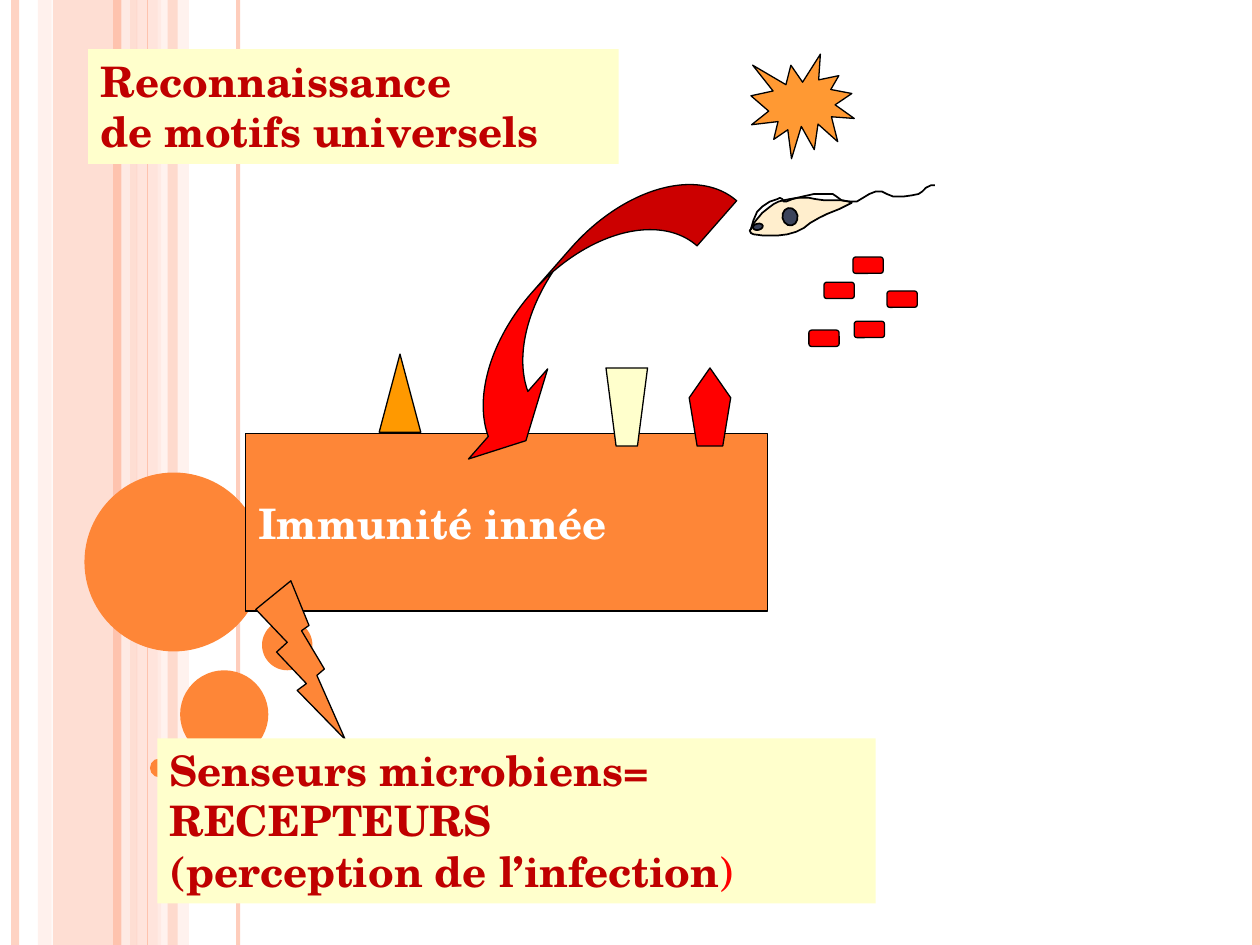
from pptx import Presentation
from pptx.dml.color import RGBColor
from pptx.enum.shapes import MSO_CONNECTOR, MSO_SHAPE as SHAPE
from pptx.enum.text import MSO_ANCHOR as ANCHOR, MSO_AUTO_SIZE as AUTO, PP_ALIGN as ALIGN
from pptx.oxml.ns import qn
from pptx.util import Inches, Pt
from lxml import etree


def rgb(color):
    return RGBColor.from_string(color)


class Builder:
    """Holds the style and the current slide."""
    FONT = {"name": "TeX Gyre Schola", "size": Pt(24), "bold": True}
    ORANGE, RED, CREAM, CRIMSON = "FE8637", "FF0000", "FFFFCC", "C00000"

    def __init__(self, slide):
        self.shapes = slide.shapes

    def paint(self, sp, fill, line, width):
        sp.shadow.inherit = False
        if fill:
            sp.fill.solid()
            sp.fill.fore_color.rgb = rgb(fill)
        else:
            sp.fill.background()
        if line:
            sp.line.color.rgb = rgb(line)
            sp.line.width = Pt(width)
        else:
            sp.line.fill.background()
        return sp

    def opacity(self, sp, percent):
        for clr in sp._element.spPr.iter(qn("a:srgbClr")):
            etree.SubElement(clr, qn("a:alpha"), val=str(percent * 1000))

    def shape(self, kind, box, fill, line="000000", width=0.75, rotation=0, adjust=()):
        sp = self.shapes.add_shape(kind, *map(Inches, box))
        sp.rotation = rotation
        for i, value in enumerate(adjust):
            sp.adjustments[i] = value
        return self.paint(sp, fill, line, width)

    def band(self, left, width, color, percent):
        sp = self.shape(SHAPE.RECTANGLE, (left, 0, width, 7.5), color, None)
        self.opacity(sp, percent)

    def stripe(self, x, color, width, percent=100):
        cn = self.shapes.add_connector(MSO_CONNECTOR.STRAIGHT, Inches(x), 0, Inches(x), Inches(7.5))
        cn.line.color.rgb = rgb(color)
        cn.line.width = Pt(width)
        etree.SubElement(cn._element.spPr, qn("a:effectLst"))
        if percent < 100:
            self.opacity(cn, percent)

    def outline(self, points, fill, width, close=True):
        """Points are in hundredths of an inch."""
        fb = self.shapes.build_freeform(*points[0], scale=Inches(0.01))
        fb.add_line_segments(points[1:], close=close)
        return self.paint(fb.convert_to_shape(), fill, "000000", width)

    def text(self, sp, lines, color, align=ALIGN.LEFT, **frame):
        """Each line is a list of (text, format changes) runs."""
        tf = sp.text_frame
        for name, value in frame.items():
            setattr(tf, name, value)
        for i, runs in enumerate(lines):
            p = tf.add_paragraph() if i else tf.paragraphs[0]
            p.alignment = align
            for words, changes in runs:
                r = p.add_run()
                r.text = words
                style = {**self.FONT, "color": color, **changes}
                r.font.color.rgb = rgb(style.pop("color"))
                for name, value in style.items():
                    setattr(r.font, name, value)

    def panel(self, box, lines, align=ALIGN.LEFT):
        sp = self.shape(SHAPE.RECTANGLE, box, self.CREAM, None)
        self.text(sp, lines, self.CRIMSON, align, word_wrap=True,
                  vertical_anchor=ANCHOR.TOP, auto_size=AUTO.SHAPE_TO_FIT_TEXT)


BODY = [
    (596, 182), (597, 179), (600, 175), (605, 169), (610, 165), (614, 162), (618, 160),
    (622, 159), (627, 158), (633, 157), (642, 157), (647, 158), (654, 159), (668, 159),
    (674, 160), (676, 161), (672, 163), (666, 166), (656, 170), (650, 173), (643, 177),
    (638, 181), (632, 184), (625, 186), (617, 187), (606, 187), (598, 186), (596, 185),
    (595, 183)]
FLAGELLUM = [
    (596, 182), (598, 175), (601, 168), (605, 164), (611, 160), (617, 158), (619, 157),
    (621, 158), (622, 160), (624, 160), (629, 158), (637, 156), (646, 154), (656, 154),
    (661, 154), (664, 156), (668, 159), (674, 160), (680, 160), (685, 157), (690, 154),
    (695, 152), (700, 152), (704, 154), (709, 156), (717, 156), (724, 155), (729, 154),
    (732, 152), (735, 149), (739, 147), (742, 147)]


def main():
    prs = Presentation()
    prs.slide_width, prs.slide_height = Inches(10), Inches(7.5)
    b = Builder(prs.slides.add_slide(prs.slide_layouts[6]))

    # Striped background
    peach, pale, faint = "FEC3AE", "FFD9CE", "FFEDE8"
    for band in ((0.42, 0.67, peach, 54), (0.3, 0.11, pale, 36),
                 (1.08, 0.2, pale, 70), (1.25, 0.25, faint, 71)):
        b.band(*band)
    for stripe in ((0.12, peach, 4.5, 73), (1, faint, 4.5, 83), (0.93, peach, 4.5),
                   (1.89, peach, 2.25, 82), (1.17, peach, 0.75), (9.97, peach, 4.5)):
        b.stripe(*stripe)
    b.band(1.33, 0.08, peach, 51)
    for x, y, size in ((0.67, 3.75, 1.42), (1.43, 5.32, 0.7), (1.19, 6.02, 0.15), (2.08, 4.92, 0.4)):
        b.shape(SHAPE.OVAL, (x, y, size, size), b.ORANGE, None)

    # Innate immunity block
    block = b.shape(SHAPE.RECTANGLE, (1.95, 3.44, 4.14, 1.41), b.ORANGE)
    b.text(block, [[("Immunité innée", {})]], "FFFFFF",
           word_wrap=False, vertical_anchor=ANCHOR.MIDDLE)

    # Microbes: virus and flagellate
    b.shape(SHAPE.EXPLOSION1, (5.96, 0.43, 0.82, 0.83), "FF9933")
    b.outline(BODY, "FFEECD", 1)
    b.outline(FLAGELLUM, None, 1, close=False)
    for box, angle in (((6.21, 1.65, 0.12, 0.14), 348), ((5.99, 1.76, 0.05, 0.08), 258)):
        b.shape(SHAPE.OVAL, box, "3B435B", width=1, rotation=angle)

    # Recognition arrow
    b.shape(SHAPE.CURVED_UP_ARROW, (3.07, 2.11, 3.01, 0.74), b.RED,
            rotation=131.3, adjust=(0.643, 1.286, 0.333))

    # Receptors on the block
    b.shape(SHAPE.ISOSCELES_TRIANGLE, (3.01, 2.81, 0.33, 0.62), "FF9900")
    b.shape(SHAPE.REGULAR_PENTAGON, (5.47, 2.92, 0.33, 0.62), b.RED)
    b.outline([(481, 292), (489, 354), (506, 354), (514, 292)], b.CREAM, 0.75)

    # Heading
    b.panel((0.7, 0.39, 4.21, 0.91),
            [[("Reconnaissance", {})], [("de motifs universels", {})]])

    # Bacteria
    for x, y in ((6.54, 2.24), (6.78, 2.55), (6.42, 2.62), (7.04, 2.31), (6.77, 2.04)):
        b.shape(SHAPE.ROUNDED_RECTANGLE, (x, y, 0.24, 0.13), b.RED)

    # Microbial sensors
    b.shape(SHAPE.LIGHTNING_BOLT, (2.03, 4.61, 0.71, 1.26), b.ORANGE)
    b.panel((1.25, 5.86, 5.7, 1.31),
            [[("Senseurs microbiens=", {})], [("RECEPTEURS", {})],
             [("(perception de l’infection", {}), (")", {"color": b.RED, "bold": False})]],
            ALIGN.JUSTIFY)

    prs.save("out.pptx")


if __name__ == "__main__":
    main()
